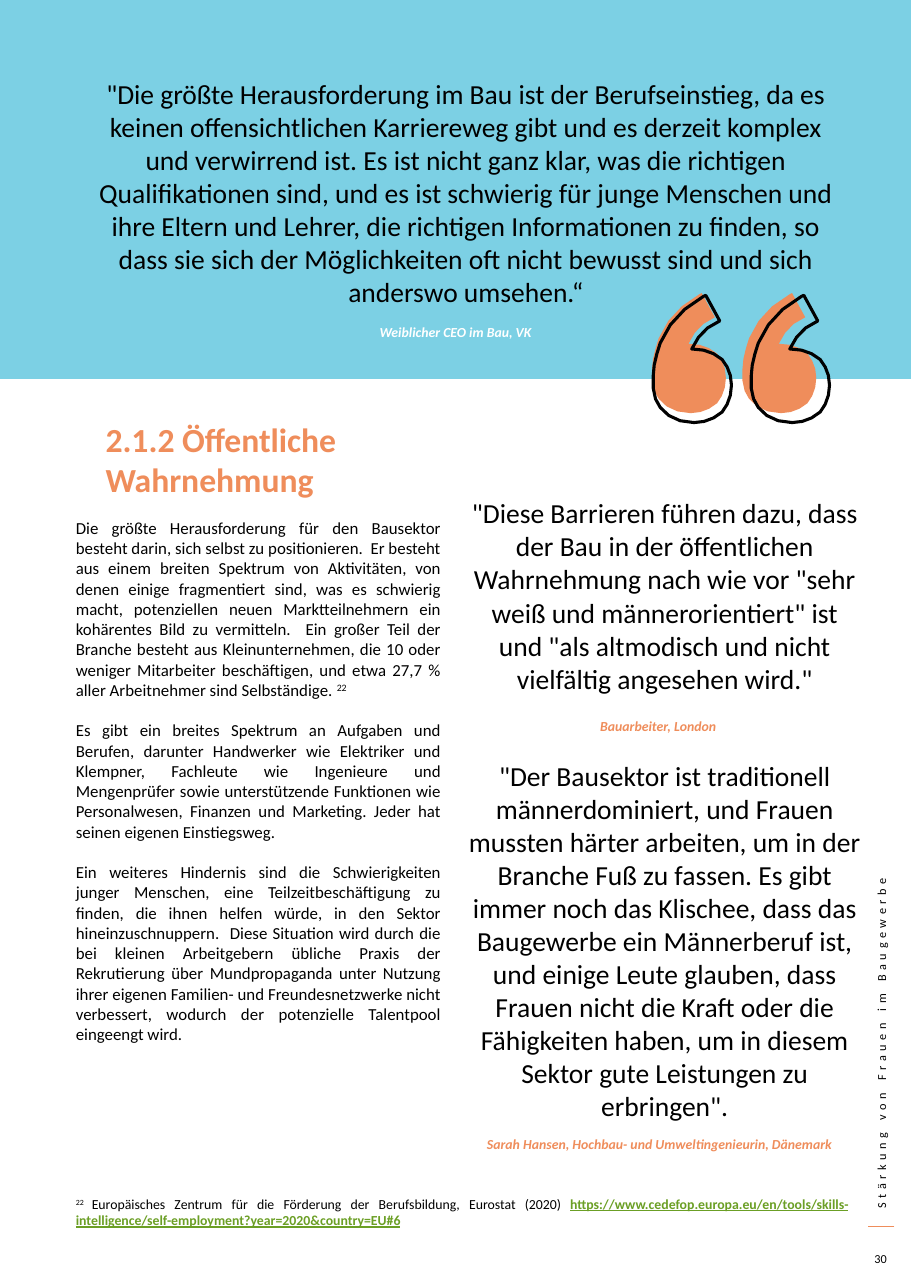
from lxml.etree import SubElement
from pptx import Presentation
from pptx.dml.color import RGBColor
from pptx.enum.shapes import MSO_CONNECTOR as CONN, MSO_SHAPE as SHAPE
from pptx.enum.text import MSO_ANCHOR as ANCHOR, PP_ALIGN as ALIGN
from pptx.oxml.ns import qn
from pptx.util import Inches, Pt

SKY, ORANGE, BLACK, WHITE, GREEN = "7CD0E4", "EF8D5B", "000000", "FFFFFF", "6B9F25"

MARK_START = (0.35, 1.09)
MARK_STEPS = [
    (0.22, 1.09, 0.12, 1.04, 0.06, 0.96),
    (0.01, 0.90, -0.01, 0.80, 0, 0.69),
    (0, 0.60, 0.03, 0.50, 0.06, 0.41),
    (0.13, 0.24, 0.25, 0.11, 0.43, 0.01),
    (0.45, 0),
    (0.57, 0.22),
    (0.45, 0.27, 0.38, 0.35, 0.33, 0.46),
    (0.44, 0.46, 0.52, 0.49, 0.59, 0.55),
    (0.64, 0.61, 0.67, 0.68, 0.67, 0.77),
    (0.67, 0.86, 0.64, 0.94, 0.59, 1.0),
    (0.52, 1.06, 0.44, 1.09, 0.35, 1.09),
]


def rgb(value):
    return RGBColor.from_string(value)


def mark_points(segments=3):
    points = [MARK_START]
    for step in MARK_STEPS:
        if len(step) == 2:
            points.append(step)
            continue
        x0, y0 = points[-1]
        x1, y1, x2, y2, x3, y3 = step
        for i in range(1, segments + 1):
            t = i / segments
            a, b, c, d = (1 - t) ** 3, 3 * t * (1 - t) ** 2, 3 * t * t * (1 - t), t ** 3
            points.append((a * x0 + b * x1 + c * x2 + d * x3,
                           a * y0 + b * y1 + c * y2 + d * y3))
    return points[:-1]


def add_run(p, text, font="Calibri", size=11, color=BLACK, bold=False,
            italic=False, underline=False, raised=False, spacing=0):
    r = p.add_run()
    r.text = text
    r.font.name, r.font.size = font, Pt(size)
    r.font.color.rgb = rgb(color)
    r.font.bold, r.font.italic, r.font.underline = bold, italic, underline
    rPr = r._r.get_or_add_rPr()
    if raised:
        rPr.set("baseline", "30000")
    if spacing:
        rPr.set("spc", str(spacing * 100))


class Page:
    def __init__(self, prs):
        self.s = prs.slides.add_slide(prs.slide_layouts[6])

    def paint(self, sp, fill=None, line=None, width=1):
        sp.shadow.inherit = False
        if fill:
            sp.fill.solid()
            sp.fill.fore_color.rgb = rgb(fill)
        else:
            sp.fill.background()
        if line:
            sp.line.color.rgb = rgb(line)
            sp.line.width = Pt(width)
        else:
            sp.line.fill.background()

    def rect(self, x, y, w, h, fill):
        sp = self.s.shapes.add_shape(SHAPE.RECTANGLE, Inches(x), Inches(y), Inches(w), Inches(h))
        self.paint(sp, fill)

    def rule(self, x1, y1, x2, y2, color):
        c = self.s.shapes.add_connector(CONN.STRAIGHT, Inches(x1), Inches(y1), Inches(x2), Inches(y2))
        c.line.color.rgb = rgb(color)
        c.line.width = Pt(1)
        SubElement(c._element.spPr, qn("a:effectLst"))

    def quote_marks(self, x, y, scale, pitch, **style):
        fb = None
        for left in (x, x + pitch):
            points = [(Inches(left + px * scale), Inches(y + py * scale)) for px, py in mark_points()]
            if fb is None:
                fb = self.s.shapes.build_freeform(*points[0], scale=1.0)
            else:
                fb.move_to(*points[0])
            fb.add_line_segments(points[1:], close=True)
        self.paint(fb.convert_to_shape(), **style)

    def text(self, x, y, w, h, paragraphs, align=ALIGN.LEFT, anchor=ANCHOR.TOP,
             gap=0, leading=None, columns=1, rotation=0, **style):
        box = self.s.shapes.add_textbox(Inches(x), Inches(y), Inches(w), Inches(h))
        box.rotation = rotation
        tf = box.text_frame
        tf.word_wrap = True
        tf.vertical_anchor = anchor
        if columns > 1:
            bodyPr = tf._txBody.bodyPr
            bodyPr.set("numCol", str(columns))
            bodyPr.set("spcCol", str(Inches(0.31)))
        for i, runs in enumerate(paragraphs):
            p = tf.add_paragraph() if i else tf.paragraphs[0]
            p.alignment = align
            if i and gap:
                p.space_before = Pt(gap)
            if leading:
                p.line_spacing = leading
            for text, extra in runs:
                add_run(p, text, **{**style, **extra})

    def quote(self, x, y, w, h, text):
        self.text(x, y, w, h, [[(text, {})]], align=ALIGN.CENTER, anchor=ANCHOR.MIDDLE, size=18)

    def speaker(self, x, y, text, color=ORANGE):
        self.text(x, y, 3.57, 0.43, [[(text, {})]], align=ALIGN.CENTER, leading=1.15,
                  size=9, color=color, bold=True, italic=True)


def main():
    prs = Presentation()
    prs.slide_width, prs.slide_height = Inches(8.27), Inches(11.69)
    page = Page(prs)

    page.text(6.27, 9.21, 3.47, 0.24, [[("Stärkung von Frauen im Baugewerbe", {})]],
              rotation=270, size=8, spacing=3)
    page.rule(8.12, 11.13, 7.88, 11.13, ORANGE)
    page.rect(0, 0, 8.27, 3.44, SKY)
    page.quote(0.73, 0.48, 7, 2.53,
               '"Die größte Herausforderung im Bau ist der Berufseinstieg, da es keinen offensichtlichen '
               'Karriereweg gibt und es derzeit komplex und verwirrend ist. Es ist nicht ganz klar, was die '
               'richtigen Qualifikationen sind, und es ist schwierig für junge Menschen und ihre Eltern und '
               'Lehrer, die richtigen Informationen zu finden, so dass sie sich der Möglichkeiten oft nicht '
               'bewusst sind und sich anderswo umsehen.“')
    page.text(7.8, 11.28, 0.39, 0.29, [[("30", {})]], align=ALIGN.CENTER, anchor=ANCHOR.MIDDLE, size=8)

    page.text(0.59, 4.65, 7.14, 5.46, [
        [("Die größte Herausforderung für den Bausektor besteht darin, sich selbst zu positionieren.  Er "
          "besteht aus einem breiten Spektrum von Aktivitäten, von denen einige fragmentiert sind, was es "
          "schwierig macht, potenziellen neuen Marktteilnehmern ein kohärentes Bild zu vermitteln.  Ein "
          "großer Teil der Branche besteht aus Kleinunternehmen, die 10 oder weniger Mitarbeiter "
          "beschäftigen, und etwa 27,7 % aller Arbeitnehmer sind Selbständige. ", {}),
         ("22", {"raised": True})],
        [("Es gibt ein breites Spektrum an Aufgaben und Berufen, darunter Handwerker wie Elektriker und "
          "Klempner, Fachleute wie Ingenieure und Mengenprüfer sowie unterstützende Funktionen wie "
          "Personalwesen, Finanzen und Marketing. Jeder hat seinen eigenen Einstiegsweg.", {})],
        [("Ein weiteres Hindernis sind die Schwierigkeiten junger Menschen, eine Teilzeitbeschäftigung zu "
          "finden, die ihnen helfen würde, in den Sektor hineinzuschnuppern.  Diese Situation wird durch "
          "die bei kleinen Arbeitgebern übliche Praxis der Rekrutierung über Mundpropaganda unter Nutzung "
          "ihrer eigenen Familien- und Freundesnetzwerke nicht verbessert, wodurch der potenzielle "
          "Talentpool eingeengt wird.", {})],
    ], align=ALIGN.JUSTIFY, gap=13.4, columns=2)

    page.quote_marks(5.92, 2.66, 1, 0.82, fill=ORANGE)
    page.quote_marks(5.93, 2.68, 1.06, 0.89, line="010101", width=2)

    page.text(0.86, 3.75, 3.57, 0.48, [[("2.1.2 Öffentliche Wahrnehmung", {})]],
              size=22, color=ORANGE, bold=True)
    page.text(0.59, 10.8, 7.21, 0.89, [[
        ("22 ", {"raised": True}),
        ("Europäisches Zentrum für die Förderung der Berufsbildung, Eurostat (2020) ", {}),
        ("https://www.cedefop.europa.eu/en/tools/skills-intelligence/self-employment?year=2020&country=EU#6",
         {"color": GREEN, "bold": True, "underline": True}),
    ]], align=ALIGN.JUSTIFY, size=9)

    page.speaker(2.35, 2.87, "Weiblicher CEO im Bau, VK", WHITE)
    page.quote(4.15, 4.54, 3.77, 1.73,
               '"Diese Barrieren führen dazu, dass der Bau in der öffentlichen Wahrnehmung nach wie vor '
               '"sehr weiß und männerorientiert" ist und "als altmodisch und nicht vielfältig angesehen wird."')
    page.speaker(4.19, 6.44, "Bauarbeiter, London")
    page.quote(4.15, 6.86, 3.77, 3.35,
               '"Der Bausektor ist traditionell männerdominiert, und Frauen mussten härter arbeiten, um in '
               'der Branche Fuß zu fassen. Es gibt immer noch das Klischee, dass das Baugewerbe ein '
               'Männerberuf ist, und einige Leute glauben, dass Frauen nicht die Kraft oder die Fähigkeiten '
               'haben, um in diesem Sektor gute Leistungen zu erbringen".')
    page.speaker(4.2, 10.24, "Sarah Hansen, Hochbau- und Umweltingenieurin, Dänemark")

    prs.save("out.pptx")


if __name__ == "__main__":
    main()
